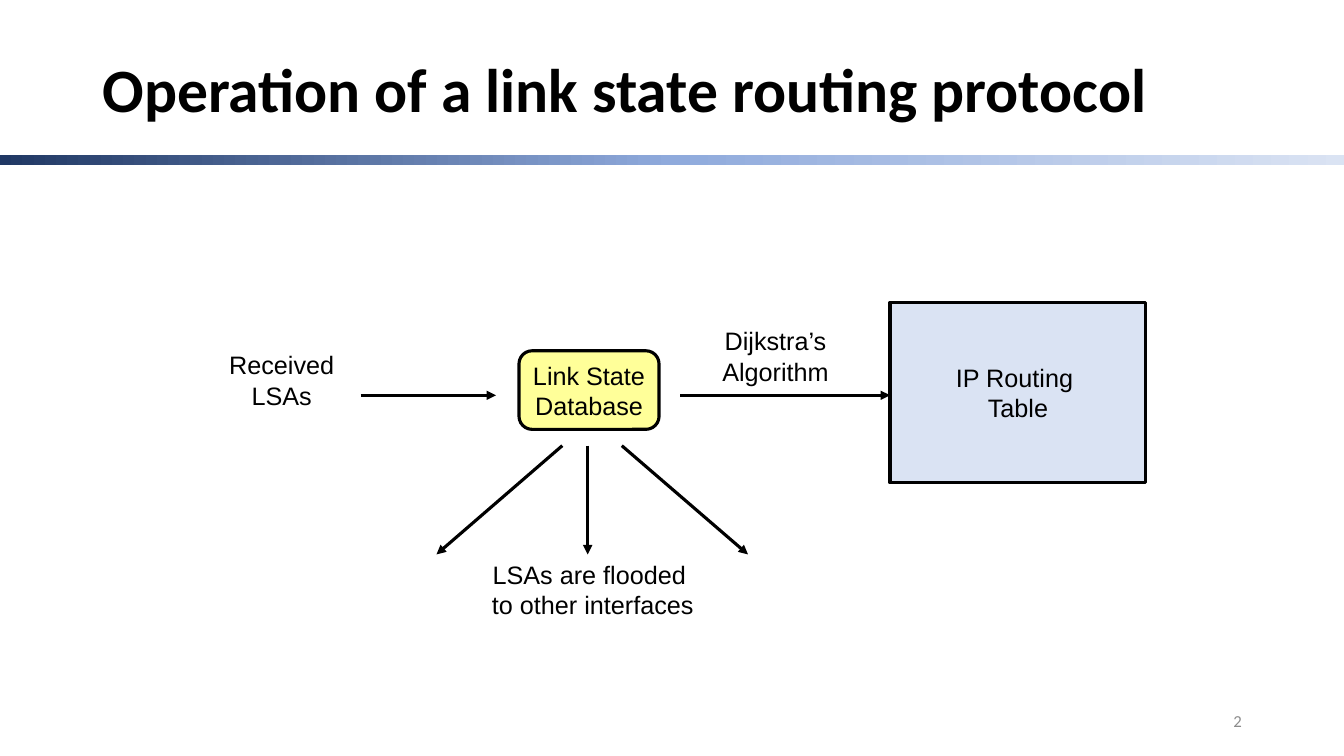
from copy import deepcopy

from lxml import etree
from pptx import Presentation
from pptx.dml.color import RGBColor
from pptx.enum.shapes import MSO_CONNECTOR, MSO_SHAPE
from pptx.enum.text import MSO_ANCHOR, PP_ALIGN
from pptx.oxml.ns import qn
from pptx.util import Cm, Pt

RECT, ROUNDED = MSO_SHAPE.RECTANGLE, MSO_SHAPE.ROUNDED_RECTANGLE
STRAIGHT = MSO_CONNECTOR.STRAIGHT
TOP, MIDDLE = MSO_ANCHOR.TOP, MSO_ANCHOR.MIDDLE
LEFT, CENTER, RIGHT = PP_ALIGN.LEFT, PP_ALIGN.CENTER, PP_ALIGN.RIGHT

COLORS = {
    "black": "000000",
    "grey": "8C8C8C",
    "navy": "203864",
    "blue": "8FAADC",
    "pale blue": "DAE3F3",
    "yellow": "FFFF99",
}
LINE_WIDTH = Pt(2.25)
SLIDE_WIDTH = 33.87


def rgb(name):
    return RGBColor.from_string(COLORS[name])


def write(shape, text, font="Arial", size=18, color="black", bold=False,
          align=CENTER, anchor=TOP, wrap=False):
    """Fill a shape with text: \\n starts a paragraph, \\v breaks a line."""
    frame = shape.text_frame
    frame.text = text
    frame.word_wrap = wrap
    frame.vertical_anchor = anchor
    for paragraph in frame.paragraphs:
        paragraph.alignment = align
        paragraph.font.name = font
        paragraph.font.size = Pt(size)
        paragraph.font.bold = bold
        paragraph.font.color.rgb = rgb(color)


prs = Presentation()
prs.slide_width, prs.slide_height = Cm(SLIDE_WIDTH), Cm(19.05)
slide = prs.slides.add_slide(prs.slide_layouts[6])
shapes = slide.shapes

# Gradient bar under the title
bar = shapes.add_shape(RECT, 0, Cm(3.91), Cm(SLIDE_WIDTH), Cm(0.24))
bar.shadow.inherit = False
bar.line.fill.background()
bar.fill.gradient()
bar.fill.gradient_angle = 0
stop_list = bar.fill._fill._gradFill.find(qn("a:gsLst"))
stop_list.insert(1, deepcopy(stop_list[0]))
bar_stops = [(0, "navy"), (0.5, "blue"), (1, "pale blue")]
for stop, (position, color) in zip(bar.fill.gradient_stops, bar_stops):
    stop.position = position
    stop.color.rgb = rgb(color)

# Title
title = shapes.add_textbox(Cm(2.34), Cm(1.02), Cm(27.94), Cm(2.64))
write(title, "Operation of a link state routing protocol", "Calibri", 44,
      bold=True, align=LEFT, anchor=MIDDLE, wrap=True)
title.text_frame.paragraphs[0].line_spacing = 0.9

# Database and routing table
for kind, left, top, width, height, fill, text in [
    (ROUNDED, 13.08, 8.84, 3.53, 1.98, "yellow", "Link State\vDatabase"),
    (RECT, 22.43, 7.62, 6.45, 4.55, "pale blue", "IP Routing \vTable"),
]:
    box = shapes.add_shape(kind, Cm(left), Cm(top), Cm(width), Cm(height))
    box.shadow.inherit = False
    box.fill.solid()
    box.fill.fore_color.rgb = rgb(fill)
    box.line.color.rgb = rgb("black")
    box.line.width = LINE_WIDTH
    write(box, text, anchor=MIDDLE)

# Labels beside the arrows
for left, top, width, text in [
    (5.51, 8.69, 3.18, "Received\vLSAs"),
    (17.93, 8.08, 3.23, "Dijkstra’s\nAlgorithm"),
    (12.12, 13.97, 5.64, "LSAs are flooded \vto other interfaces"),
]:
    label = shapes.add_textbox(Cm(left), Cm(top), Cm(width), Cm(1.8))
    write(label, text)

# Arrows: two along the main flow, three flooding downwards
flow_y, flood_top, flood_bottom = 9.96, 11.23, 13.97
for x1, y1, x2, y2 in [
    (9.09, flow_y, 12.5, flow_y),
    (17.15, flow_y, 22.43, flow_y),
    (14.17, flood_top, 11, flood_bottom),
    (14.81, flood_top, 14.81, flood_bottom),
    (15.67, flood_top, 18.85, flood_bottom),
]:
    arrow = shapes.add_connector(STRAIGHT, Cm(x1), Cm(y1), Cm(x2), Cm(y2))
    arrow.line.color.rgb = rgb("black")
    arrow.line.width = LINE_WIDTH
    etree.SubElement(arrow.line._get_or_add_ln(), qn("a:tailEnd"), type="triangle")
    etree.SubElement(arrow._element.spPr, qn("a:effectLst"))

# Slide number
number = shapes.add_textbox(Cm(23.93), Cm(17.65), Cm(7.62), Cm(1.02))
write(number, "2", "Calibri", 12, "grey", align=RIGHT, anchor=MIDDLE, wrap=True)

prs.save("out.pptx")
